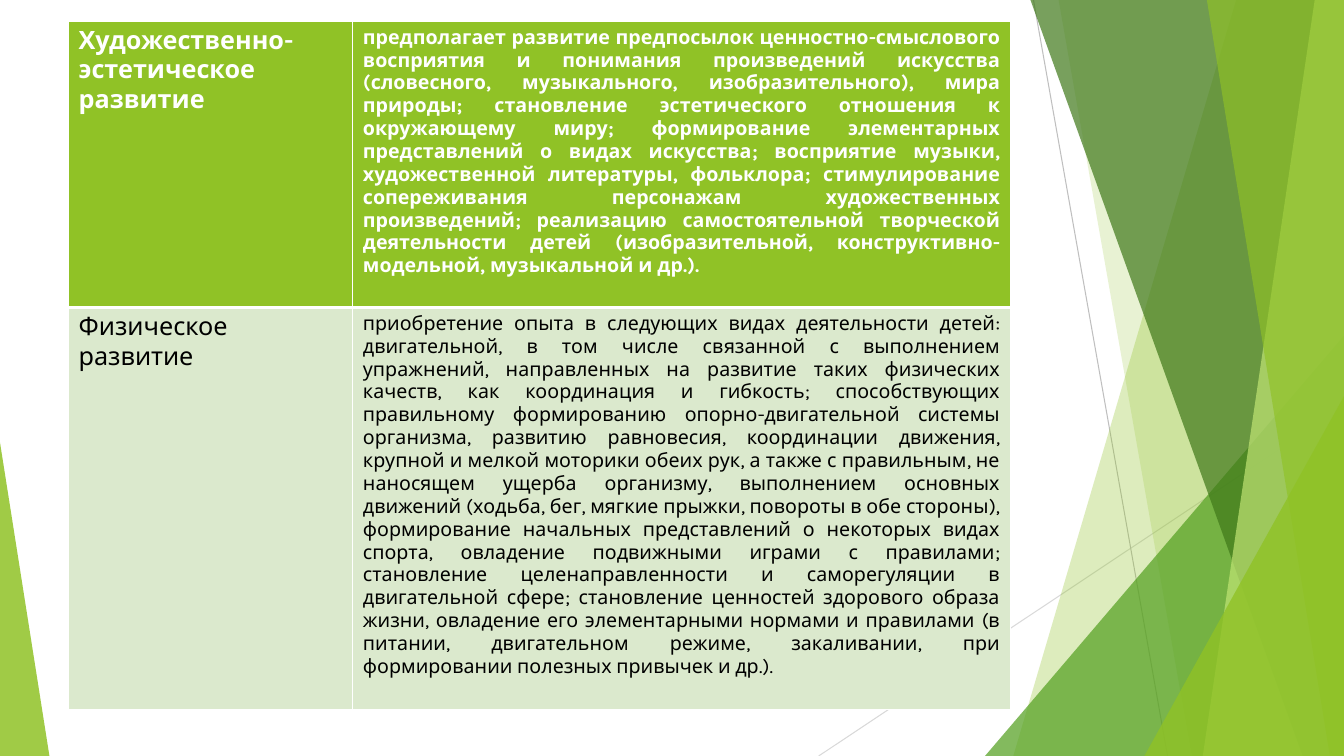
"""Build a slide with a table of two areas of child development."""
from lxml.etree import SubElement as Sub
from pptx import Presentation
from pptx.dml.color import RGBColor as Rgb
from pptx.enum.shapes import MSO_CONNECTOR as Conn
from pptx.enum.text import PP_ALIGN as Align
from pptx.oxml import parse_xml
from pptx.oxml.ns import nsdecls, qn
from pptx.util import Inches, Pt

WIDE, HIGH = 13.33, 7.5
HUES = {
    "lime": "90C226", "green": "54A021", "dark": "3F7819", "light": "C0E474",
    "pale": "DBE9CD", "white": "FFFFFF", "black": "000000",
    "mist": "D9D9D9", "gray": "BFBFBF",
}
LINES = [
    ((8.12, HIGH), (WIDE, 4.03), "mist"),
    ((10.25, 0), (11.58, HIGH), "gray"),
]
FACETS = [
    ("lime", 30, [(12.26, 0), (10.05, HIGH), (WIDE, HIGH), (WIDE, 0)]),
    ("lime", 20, [(10.5, 0), (11.82, HIGH), (WIDE, HIGH), (WIDE, 0)]),
    ("green", 72, [(9.77, HIGH), (WIDE, 3.33), (WIDE, HIGH)]),
    ("dark", 70, [(10.22, 0), (12.92, HIGH), (WIDE, HIGH), (WIDE, 0)]),
    ("light", 70, [(13.04, 0), (11.93, HIGH), (WIDE, HIGH), (WIDE, 0)]),
    ("lime", 65, [(11.97, 0), (13.19, HIGH), (WIDE, HIGH), (WIDE, 0)]),
    ("lime", 80, [(11.35, HIGH), (WIDE, 3.93), (WIDE, HIGH)]),
    ("lime", 85, [(0, 4.39), (0.49, HIGH), (0, HIGH)]),
]
LEFT, TOP = 0.68, 0.21
COLS, ROWS = (2.82, 6.52), (2.84, 3.99)
AREAS = [
    (["Художественно-эстетическое развитие"],
     ["предполагает развитие предпосылок ценностно-смыслового восприятия и "
      "понимания произведений искусства (словесного, музыкального, "
      "изобразительного), мира природы;",
      "становление эстетического отношения к окружающему миру;",
      "формирование элементарных представлений о видах искусства;",
      "восприятие музыки, художественной литературы, фольклора;",
      "стимулирование сопереживания персонажам художественных произведений;",
      "реализацию самостоятельной творческой деятельности детей "
      "(изобразительной, конструктивно-модельной, музыкальной и др.)."]),
    (["Физическое развитие"],
     ["приобретение опыта в следующих видах деятельности детей: двигательной, "
      "в том числе связанной с выполнением упражнений, направленных на "
      "развитие таких физических качеств, как координация и гибкость;",
      "способствующих правильному формированию опорно-двигательной системы "
      "организма, развитию равновесия, координации движения, крупной и мелкой "
      "моторики обеих рук, а также с правильным, не наносящем ущерба "
      "организму, выполнением основных движений (ходьба, бег, мягкие прыжки, "
      "повороты в обе стороны), формирование начальных представлений о "
      "некоторых видах спорта, овладение подвижными играми с правилами;",
      "становление целенаправленности и саморегуляции в двигательной сфере;",
      "становление ценностей здорового образа жизни, овладение его "
      "элементарными нормами и правилами (в питании, двигательном режиме, "
      "закаливании, при формировании полезных привычек и др.)."]),
]
ROW_LOOK = [
    {"fill": "lime", "text": "white", "bold": True,
     "edges": {"L": 1, "R": 1, "T": 1, "B": 3}},
    {"fill": "pale", "text": "black", "bold": False,
     "edges": {"L": 1, "R": 1, "T": 3, "B": 1}},
]
COL_LOOK = [(18, Align.LEFT), (14, Align.JUSTIFY)]


def hue(name):
    return Rgb.from_string(HUES[name])


def paint(fill, name):
    fill.solid()
    fill.fore_color.rgb = hue(name)


def add_line(slide, start, end, name):
    ends = [Inches(n) for n in start + end]
    line = slide.shapes.add_connector(Conn.STRAIGHT, *ends)
    line.line.width = Pt(0.75)
    line.line.color.rgb = hue(name)
    Sub(line.element.spPr, qn("a:effectLst"))


def add_facet(slide, name, alpha, points):
    first, *rest = [(round(x * 100), round(y * 100)) for x, y in points]
    pen = slide.shapes.build_freeform(*first, scale=Inches(0.01))
    pen.add_line_segments(rest, close=True)
    facet = pen.convert_to_shape()
    facet.shadow.inherit = False
    facet.line.fill.background()
    paint(facet.fill, name)
    tint = next(facet.element.spPr.iter(qn("a:srgbClr")))
    Sub(tint, qn("a:alpha"), val=str(alpha * 1000))


def fill_cell(cell, parts, look, size, align):
    paint(cell.fill, look["fill"])
    cell.text = " ".join(parts)
    para = cell.text_frame.paragraphs[0]
    para.alignment = align
    font = para.runs[0].font
    style = {"name": "Karla", "size": Pt(size), "bold": look["bold"]}
    for key, value in style.items():
        setattr(font, key, value)
    font.color.rgb = hue(look["text"])
    props = cell._tc.get_or_add_tcPr()
    for spot, (side, width) in enumerate(look["edges"].items()):
        props.insert(spot, parse_xml(
            f'<a:ln{side} {nsdecls("a")} w="{Pt(width)}"><a:solidFill>'
            f'<a:srgbClr val="{HUES["white"]}"/></a:solidFill></a:ln{side}>'))


def add_areas(slide):
    box = [Inches(n) for n in (LEFT, TOP, sum(COLS), sum(ROWS))]
    table = slide.shapes.add_table(len(ROWS), len(COLS), *box).table
    for col, width in zip(table.columns, COLS):
        col.width = Inches(width)
    for row, height, texts, look in zip(table.rows, ROWS, AREAS, ROW_LOOK):
        row.height = Inches(height)
        for cell, parts, (size, align) in zip(row.cells, texts, COL_LOOK):
            fill_cell(cell, parts, look, size, align)


def main():
    deck = Presentation()
    deck.slide_width, deck.slide_height = Inches(WIDE), Inches(HIGH)
    slide = deck.slides.add_slide(deck.slide_layouts[6])
    paint(slide.background.fill, "white")
    for line in LINES:
        add_line(slide, *line)
    for facet in FACETS:
        add_facet(slide, *facet)
    add_areas(slide)
    deck.save("out.pptx")


if __name__ == "__main__":
    main()
